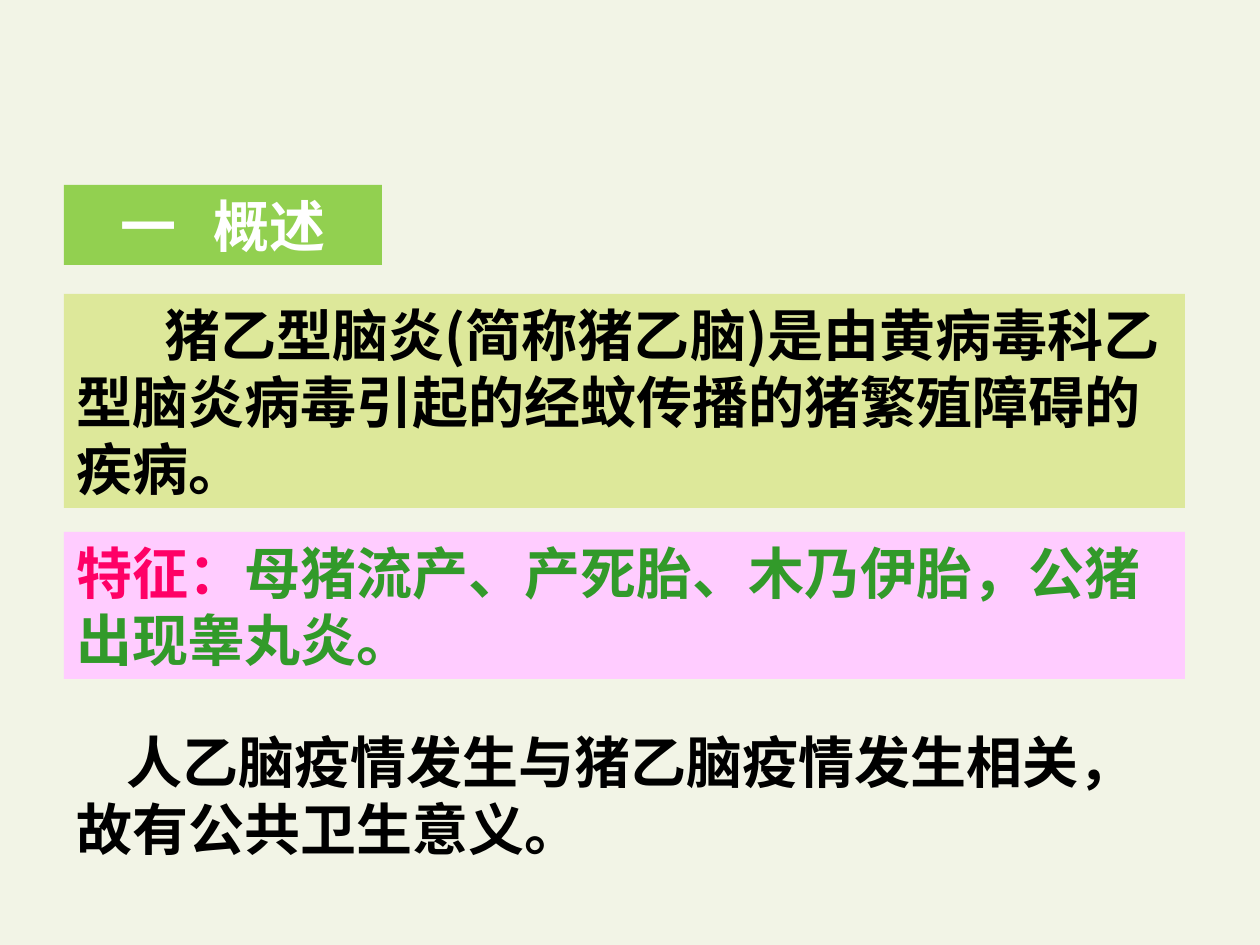
from dataclasses import dataclass

from lxml import etree
from pptx import Presentation
from pptx.dml.color import RGBColor
from pptx.enum.shapes import MSO_SHAPE
from pptx.enum.text import MSO_ANCHOR, MSO_AUTO_SIZE, PP_ALIGN
from pptx.oxml.ns import qn
from pptx.util import Pt

RECTANGLE = MSO_SHAPE.RECTANGLE
TOP = MSO_ANCHOR.TOP
NO_FIT = MSO_AUTO_SIZE.NONE
LEFT, CENTER = PP_ALIGN.LEFT, PP_ALIGN.CENTER
TITLE_ONLY = 5
EMU_PER_PX = 914400 // 126


def px(length):
    return length * EMU_PER_PX


@dataclass(frozen=True)
class Theme:
    background: str = "F2F4E6"
    heading_fill: str = "92D050"
    definition_fill: str = "DDE89A"
    features_fill: str = "FFCCFF"
    white: str = "FFFFFF"
    black: str = "000000"
    accent: str = "FF0066"
    green: str = "329A2A"
    heading_font: str = "Arial"
    body_font: str = "Noto Sans CJK SC"
    text_size: float = 32
    gap_size: float = 21.5
    line_height: float = 38.4


class SlideBuilder:
    def __init__(self, slide, theme):
        self.slide = slide
        self.theme = theme
        self.paint(slide.background.fill, theme.background)

    def paint(self, fill, color):
        fill.solid()
        fill.fore_color.rgb = RGBColor.from_string(color)

    def apply(self, target, values):
        for name, value in values.items():
            setattr(target, name, value)

    def fill_text(self, frame, runs, font, align=LEFT, indent=0):
        self.apply(frame, {"word_wrap": True, "auto_size": NO_FIT, "vertical_anchor": TOP})
        paragraph = frame.paragraphs[0]
        self.apply(paragraph, {"alignment": align, "line_spacing": Pt(self.theme.line_height)})
        if indent:
            paragraph._p.get_or_add_pPr().set("indent", str(px(indent)))
        for words, color, size in runs:
            run = paragraph.add_run()
            run.text = words
            self.apply(run.font, {"name": font, "size": Pt(size), "bold": True})
            run.font.color.rgb = RGBColor.from_string(color)
            east_asian = etree.SubElement(run._r.get_or_add_rPr(), qn("a:ea"))
            east_asian.set("typeface", self.theme.body_font)

    def heading(self, box, number, words):
        theme = self.theme
        title = self.slide.shapes.title
        self.apply(title, dict(zip(("left", "top", "width", "height"), map(px, box))))
        self.paint(title.fill, theme.heading_fill)
        runs = [
            (number, theme.white, theme.text_size),
            ("　", theme.white, theme.gap_size),
            (words, theme.white, theme.text_size),
        ]
        self.fill_text(title.text_frame, runs, theme.heading_font, CENTER)

    def panel(self, box, fill, parts, indent=0):
        panel = self.slide.shapes.add_shape(RECTANGLE, *map(px, box))
        panel.shadow.inherit = False
        panel.line.fill.background()
        self.paint(panel.fill, fill)
        self.body(panel, parts, indent)

    def note(self, box, parts, indent=0):
        self.body(self.slide.shapes.add_textbox(*map(px, box)), parts, indent)

    def body(self, holder, parts, indent):
        runs = [(words, color, self.theme.text_size) for words, color in parts]
        self.fill_text(holder.text_frame, runs, self.theme.body_font, indent=indent)


def main():
    theme = Theme()
    deck = Presentation()
    deck.slide_width, deck.slide_height = px(1260), px(945)
    builder = SlideBuilder(deck.slides.add_slide(deck.slide_layouts[TITLE_ONLY]), theme)
    left, width = 64, 1121

    builder.heading((left, 185, 318, 80), "一", "概述")
    definition = "猪乙型脑炎(简称猪乙脑)是由黄病毒科乙型脑炎病毒引起的经蚊传播的猪繁殖障碍的疾病。"
    builder.panel((left, 294, width, 214), theme.definition_fill,
                  [(definition, theme.black)], indent=88)
    features = [
        ("特征：", theme.accent),
        ("母猪流产、产死胎、木乃伊胎，公猪出现睾丸炎。", theme.green),
    ]
    builder.panel((left, 532, width, 147), theme.features_fill, features)
    significance = "人乙脑疫情发生与猪乙脑疫情发生相关，故有公共卫生意义。"
    builder.note((left, 721, width, 147), [(significance, theme.black)], indent=50)

    deck.save("out.pptx")


if __name__ == "__main__":
    main()
